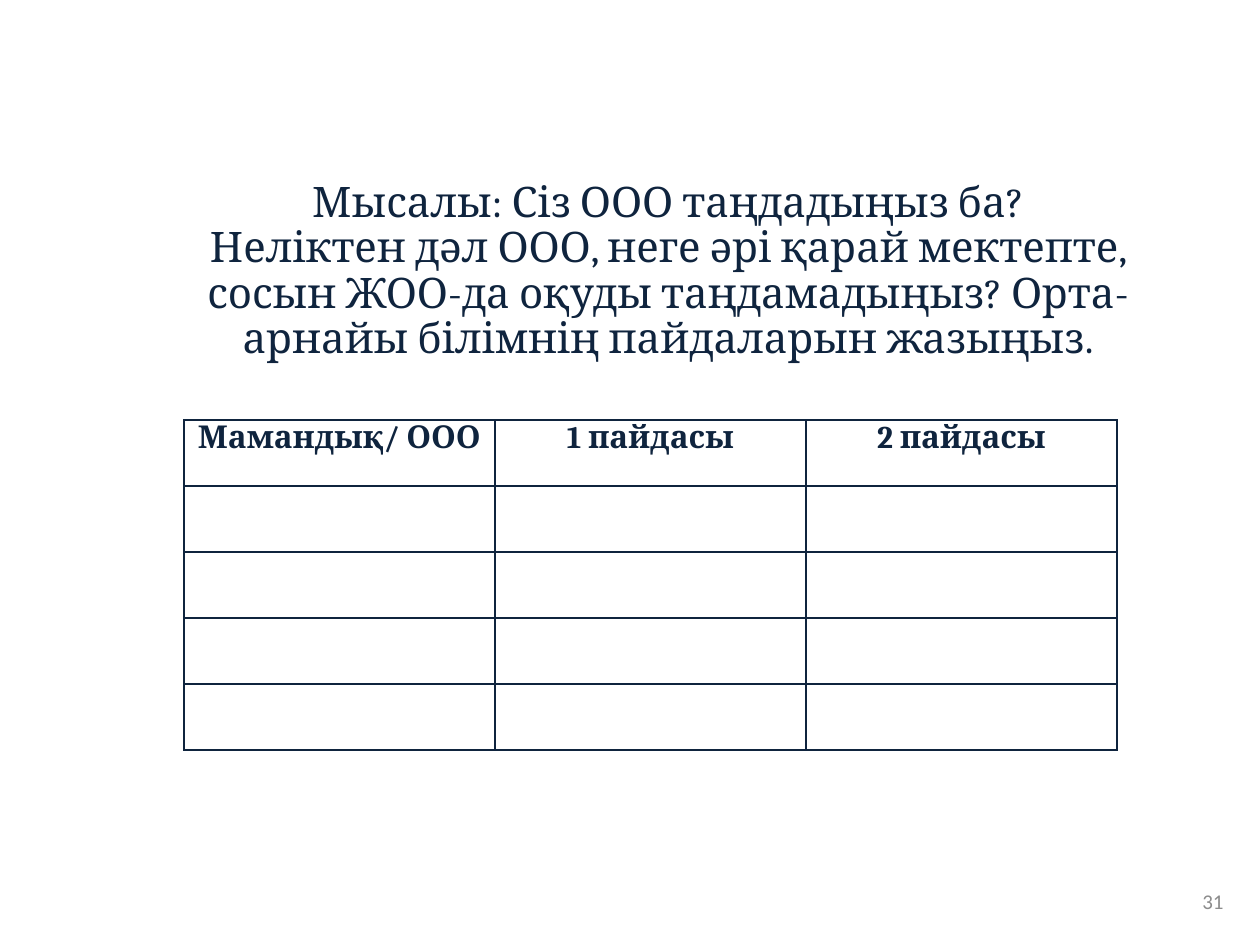
from lxml import etree
from pptx import Presentation
from pptx.dml.color import RGBColor
from pptx.enum.text import MSO_ANCHOR, PP_ALIGN
from pptx.oxml.ns import qn
from pptx.util import Pt

EMU_PER_PX = 914400 // 126
CENTER, RIGHT = PP_ALIGN.CENTER, PP_ALIGN.RIGHT
TOP, MIDDLE = MSO_ANCHOR.TOP, MSO_ANCHOR.MIDDLE
NAVY, GRAY = "0F243E", "8C8C8C"
BORDER_SIDES = ("a:lnL", "a:lnR", "a:lnT", "a:lnB")

QUESTION = (
    "Мысалы: Сіз ООО таңдадыңыз ба?",
    "Неліктен дәл ООО, неге әрі қарай мектепте, сосын ЖОО-да оқуды "
    "таңдамадыңыз? Орта-арнайы білімнің пайдаларын жазыңыз.",
)
HEADERS = ("Мамандық/ ООО", "1 пайдасы", "2 пайдасы")
ROW_COUNT = 5
COLUMN_WIDTH, ROW_HEIGHT = 311, 66
CELL_MARGIN = 9


def px(length):
    return length * EMU_PER_PX


def color(value):
    return RGBColor.from_string(value)


def write(para, text, size, font, fill, align, bold=False):
    para.alignment = align
    span = para.add_run()
    span.text = text
    span.font.size = Pt(size)
    span.font.name = font
    span.font.bold = bold
    span.font.color.rgb = color(fill)


def add_text(page, area, lines, size, font, fill, align, anchor=TOP, spacing=1.0):
    frame = page.shapes.add_textbox(*map(px, area)).text_frame
    frame.word_wrap = True
    frame.vertical_anchor = anchor
    for index, line in enumerate(lines):
        para = frame.add_paragraph() if index else frame.paragraphs[0]
        para.line_spacing = spacing
        write(para, line, size, font, fill, align)


def set_borders(cell, fill, width):
    """Outline all four sides; borders must precede the fill in the cell XML."""
    properties = cell._tc.get_or_add_tcPr()
    for position, side in enumerate(BORDER_SIDES):
        line = etree.Element(qn(side), w=str(Pt(width)))
        solid = etree.SubElement(line, qn("a:solidFill"))
        etree.SubElement(solid, qn("a:srgbClr"), val=fill)
        properties.insert(position, line)


def add_benefit_table(page, left, top):
    width, height = COLUMN_WIDTH * len(HEADERS), ROW_HEIGHT * ROW_COUNT
    table = page.shapes.add_table(
        ROW_COUNT, len(HEADERS), px(left), px(top), px(width), px(height)
    ).table
    table.first_row = table.horz_banding = False
    for column in table.columns:
        column.width = px(COLUMN_WIDTH)
    for row in table.rows:
        row.height = px(ROW_HEIGHT)
    for cell in table.iter_cells():
        cell.margin_left = cell.margin_right = px(CELL_MARGIN)
        cell.margin_top = cell.margin_bottom = 0
        cell.fill.background()
        set_borders(cell, NAVY, 1)
    for cell, header in zip(table.rows[0].cells, HEADERS):
        write(cell.text_frame.paragraphs[0], header, 18, "Cambria", NAVY, CENTER, True)


def main():
    deck = Presentation()
    deck.slide_width, deck.slide_height = px(1260), px(945)
    page = deck.slides.add_slide(deck.slide_layouts[6])
    add_text(page, (903, 876, 333, 50), ["31"], 12, "Calibri", GRAY, RIGHT, MIDDLE)
    add_text(page, (134, 175, 1068, 317), QUESTION, 24, "Cambria", NAVY, CENTER,
             spacing=0.9)
    add_benefit_table(page, 184, 420)
    deck.save("out.pptx")


if __name__ == "__main__":
    main()
